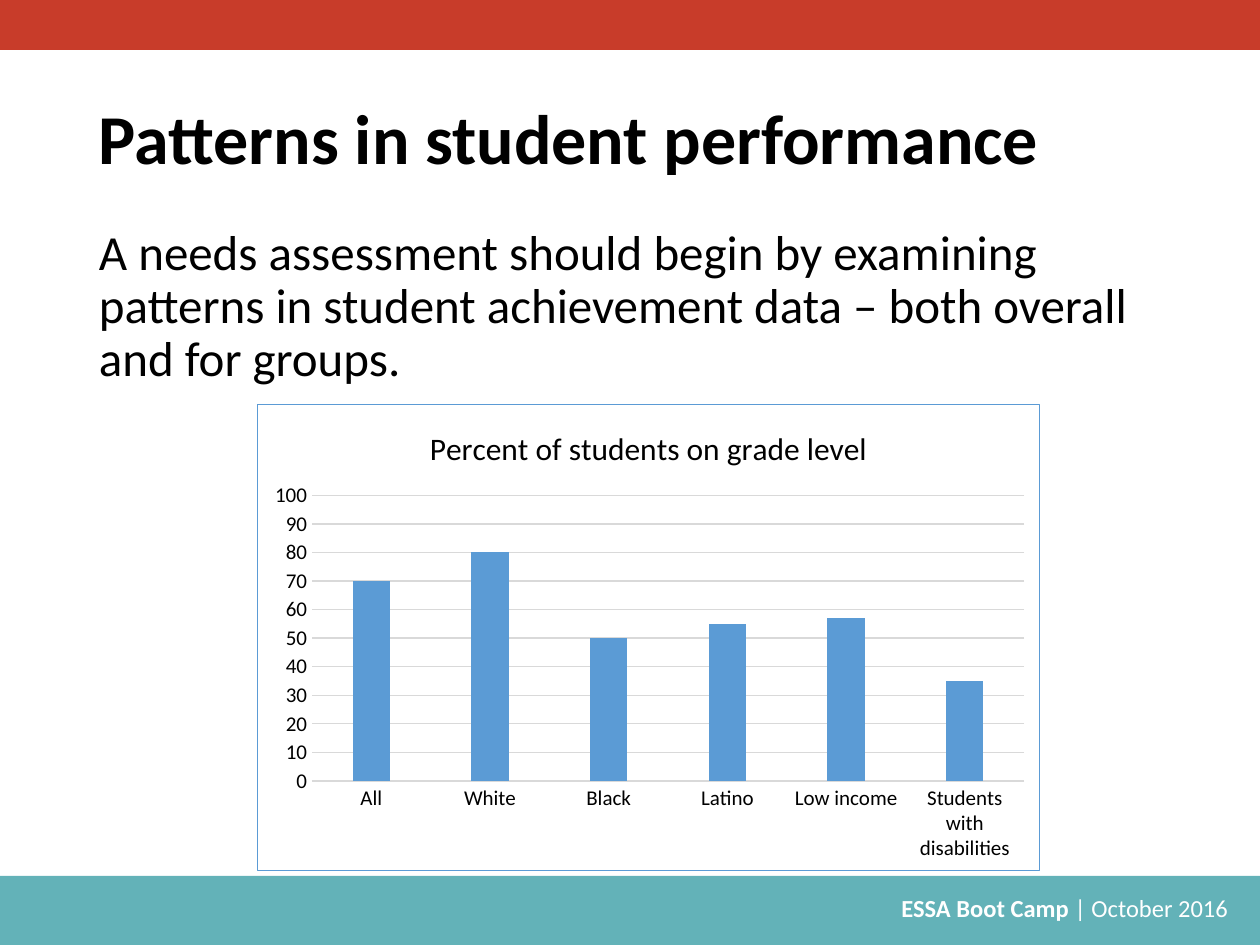
from pptx import Presentation
from pptx.chart.data import CategoryChartData as Data
from pptx.dml.color import RGBColor as RGB
from pptx.enum.chart import XL_CHART_TYPE as Kind, XL_TICK_MARK as Tick
from pptx.enum.shapes import MSO_SHAPE as Form
from pptx.enum.text import MSO_ANCHOR as Anchor, PP_ALIGN as Align
from pptx.oxml import parse_xml
from pptx.oxml.ns import nsdecls, qn
from pptx.util import Pt

HUES = {"red": "C83C2A", "teal": "63B2B8", "blue": "5B9BD5",
        "grey": "D9D9D9", "black": "000000", "white": "FFFFFF"}


class Deck:
    def __init__(self, wide, high):
        self.face = "Calibri"
        self.file = Presentation()
        self.file.slide_width, self.file.slide_height = Pt(wide), Pt(high)
        self.slide = self.file.slides.add_slide(self.file.slide_layouts[6])

    def hue(self, name):
        return RGB.from_string(HUES[name])

    def style(self, font, size, hue="black", bold=False):
        font.name, font.size, font.bold = self.face, Pt(size), bold
        font.color.rgb = self.hue(hue)

    def band(self, box, hue):
        band = self.slide.shapes.add_shape(Form.RECTANGLE, *map(Pt, box))
        band.shadow.inherit = False
        band.fill.solid()
        band.fill.fore_color.rgb = self.hue(hue)
        band.line.fill.background()

    def text(self, box, runs, size, hue="black", bold=False, align=Align.LEFT,
             anchor=Anchor.TOP, space=1, before=0):
        frame = self.slide.shapes.add_textbox(*map(Pt, box)).text_frame
        frame.word_wrap = True
        frame.vertical_anchor = anchor
        par = frame.paragraphs[0]
        par.alignment, par.line_spacing = align, space
        par.space_before = Pt(before)
        self.style(par.font, size, hue, bold)
        for words, heavy in runs:
            run = par.add_run()
            run.text = words
            if heavy != bold:
                run.font.bold = heavy

    def rule(self, line, hue):
        line.color.rgb = self.hue(hue)
        line.width = Pt(0.75)

    def chart(self, box, title, names, vals, plot):
        data = Data()
        data.categories = names
        data.add_series("Series 1", vals)
        chart = self.slide.shapes.add_chart(
            Kind.COLUMN_CLUSTERED, *map(Pt, box), data).chart
        self.style(chart.font, 10)
        chart.has_legend = False
        chart.has_title = True
        head = chart.chart_title.text_frame
        head.text = title
        self.style(head.paragraphs[0].font, 18)
        bars = chart.plots[0]
        bars.gap_width, bars.overlap = 219, -27
        bars.vary_by_categories = False
        fill = bars.series[0].format.fill
        fill.solid()
        fill.fore_color.rgb = self.hue("blue")
        base, side = chart.category_axis, chart.value_axis
        for axis in (base, side):
            axis.major_tick_mark = axis.minor_tick_mark = Tick.NONE
            self.style(axis.tick_labels.font, 12)
        base.has_major_gridlines = False
        self.rule(base.format.line, "grey")
        side.minimum_scale, side.maximum_scale, side.major_unit = 0, 100, 10
        side.format.line.fill.background()
        self.rule(side.major_gridlines.format.line, "grey")
        self.place(chart, plot)
        self.frame(chart, "blue")

    def place(self, chart, plot):
        marks = "".join(f'<c:{key} val="{val}"/>' for key, val in plot.items())
        area = chart.element.find(".//" + qn("c:plotArea"))
        old = area.find(qn("c:layout"))
        if old is not None:
            area.remove(old)
        area.insert(0, parse_xml(
            f'<c:layout {nsdecls("c")}><c:manualLayout>'
            '<c:layoutTarget val="inner"/><c:xMode val="edge"/>'
            f'<c:yMode val="edge"/>{marks}</c:manualLayout></c:layout>'))

    def frame(self, chart, hue):
        chart.element.find(qn("c:chart")).addnext(parse_xml(
            f'<c:spPr {nsdecls("c", "a")}><a:noFill/><a:ln w="{Pt(0.75)}">'
            f'<a:solidFill><a:srgbClr val="{HUES[hue]}"/></a:solidFill>'
            '</a:ln></c:spPr>'))


def main():
    deck = Deck(720, 540)
    deck.band((0, 500.5, 720, 39.5), "teal")
    deck.band((0, 0, 720, 28.5), "red")
    deck.text((259, 507, 453, 24.5),
              [("ESSA Boot Camp ", True), ("| October 2016 ", False)],
              14, "white", align=Align.RIGHT)
    deck.text((49.5, 28.75, 621, 104.4),
              [("Patterns in student performance", True)],
              40, bold=True, anchor=Anchor.MIDDLE, space=0.9)
    deck.text((49.5, 126.7, 621, 342.6),
              [("A needs assessment should begin by examining patterns in "
                "student achievement data – both overall and for groups.", False)],
              28, space=0.9, before=10)
    deck.chart((146.6, 230.8, 448, 267), "Percent of students on grade level",
               ["All", "White", "Black", "Latino", "Low income",
                "Students with disabilities"],
               [70, 80, 50, 55, 57, 35],
               {"x": 0.07, "y": 0.195, "w": 0.91, "h": 0.613})
    deck.file.save("out.pptx")


if __name__ == "__main__":
    main()
